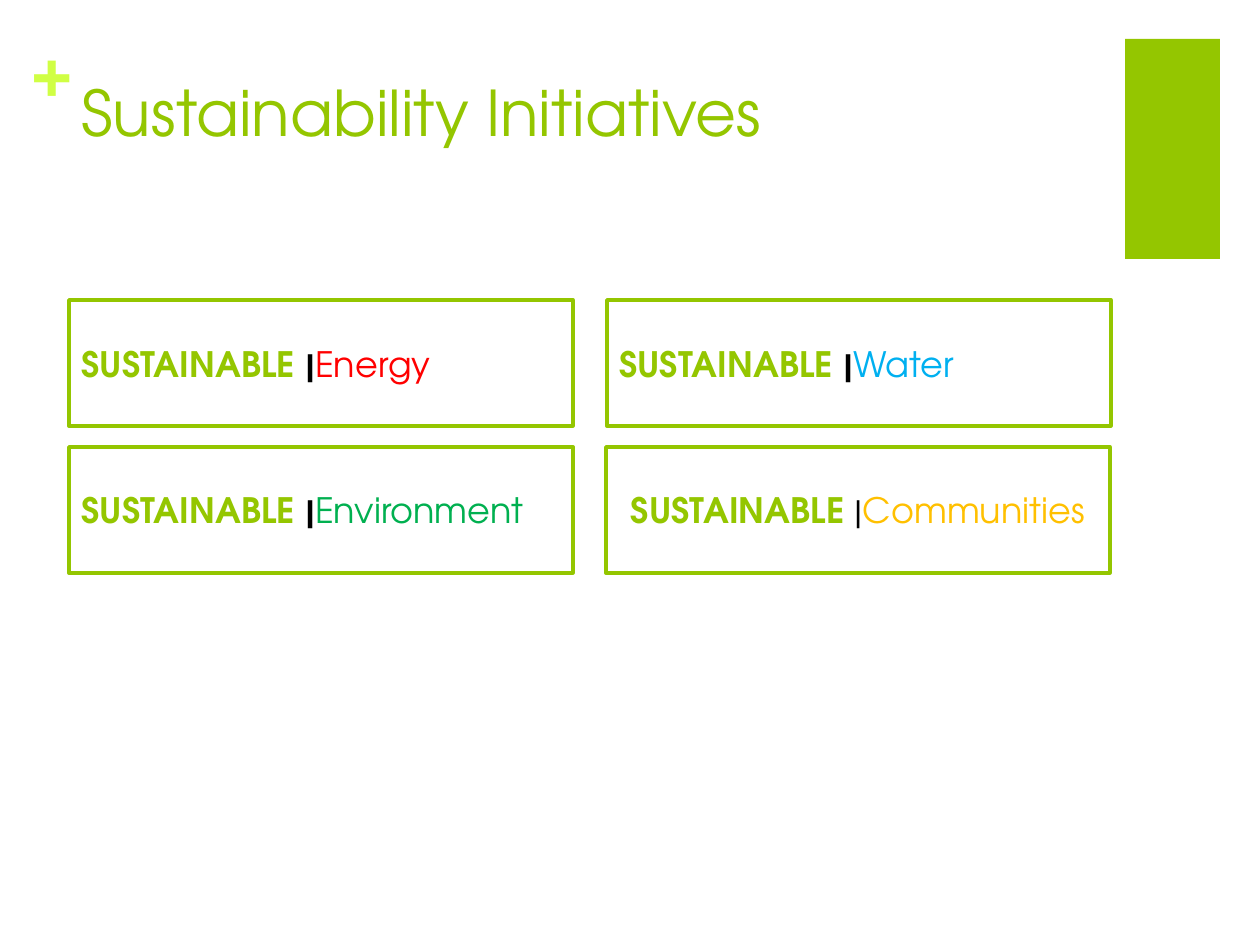
from dataclasses import dataclass

from pptx import Presentation
from pptx.dml.color import RGBColor
from pptx.enum.shapes import MSO_SHAPE
from pptx.enum.text import MSO_ANCHOR, MSO_AUTO_SIZE, PP_ALIGN
from pptx.util import Emu, Pt

RECT = MSO_SHAPE.RECTANGLE
TOP, MIDDLE = MSO_ANCHOR.TOP, MSO_ANCHOR.MIDDLE
LEFT, CENTER = PP_ALIGN.LEFT, PP_ALIGN.CENTER
NO_FIT = MSO_AUTO_SIZE.NONE

EMU_PER_PX = 914400 / 126
FONT = "TeX Gyre Adventor"
GREEN, LIME, BLACK, WHITE = "94C600", "D0FF44", "000000", "FFFFFF"
CARD_W, CARD_H = 504, 126
ROW_1, ROW_2 = 300, 447


@dataclass
class Card:
    left: int
    top: int
    topic: str
    color: str
    align: PP_ALIGN = LEFT
    bold_bar: bool = True


CARDS = [
    Card(69, ROW_1, "Energy", "FF0000"),
    Card(69, ROW_2, "Environment", "00B050"),
    Card(607, ROW_1, "Water", "00B0F0"),
    Card(606, ROW_2, "Communities", "FFC000", CENTER, False),
]


def px(n: int) -> Emu:
    return Emu(round(n * EMU_PER_PX))


def rgb(value: str) -> RGBColor:
    return RGBColor.from_string(value)


def style_text(p, text: str, size: int, color: str, bold: bool = False) -> None:
    p.text = text
    p.font.name, p.font.size, p.font.bold = FONT, Pt(size), bold
    p.font.color.rgb = rgb(color)


def add_rect(s, left: int, top: int, width: int, height: int, fill: str):
    sp = s.shapes.add_shape(RECT, px(left), px(top), px(width), px(height))
    sp.shadow.inherit = False
    sp.fill.solid()
    sp.fill.fore_color.rgb = rgb(fill)
    sp.line.fill.background()
    return sp


def add_card(s, card: Card) -> None:
    sp = add_rect(s, card.left, card.top, CARD_W, CARD_H, WHITE)
    sp.line.color.rgb = rgb(GREEN)
    sp.line.width = Pt(2)
    tf = sp.text_frame
    tf.word_wrap = True
    tf.vertical_anchor = MIDDLE
    p = tf.paragraphs[0]
    p.alignment = card.align
    p.space_before = Pt(20)
    p.font.name, p.font.size = FONT, Pt(20)
    for text, color, bold in (
        ("SUSTAINABLE", GREEN, True),
        (" |", BLACK, card.bold_bar),
        (card.topic, card.color, False),
    ):
        r = p.add_run()
        r.text = text
        r.font.bold = bold
        r.font.color.rgb = rgb(color)


def main() -> None:
    prs = Presentation()
    prs.slide_width, prs.slide_height = px(1260), px(945)
    s = prs.slides.add_slide(prs.slide_layouts[5])

    # Corner block and plus sign
    add_rect(s, 1125, 39, 95, 220, GREEN)
    plus = s.shapes.add_textbox(px(30), px(32), px(37), px(77))
    tf = plus.text_frame
    tf.margin_left = tf.margin_right = tf.margin_top = tf.margin_bottom = 0
    style_text(tf.paragraphs[0], "+", 36, LIME, bold=True)

    # Title
    title = s.shapes.title
    title.left, title.top, title.width, title.height = px(69), px(67), px(1041), px(154)
    tf = title.text_frame
    tf.auto_size = NO_FIT
    tf.vertical_anchor = TOP
    p = tf.paragraphs[0]
    p.alignment = LEFT
    style_text(p, "Sustainability Initiatives", 36, GREEN)

    # Initiative cards
    for card in CARDS:
        add_card(s, card)

    prs.save("out.pptx")


if __name__ == "__main__":
    main()
